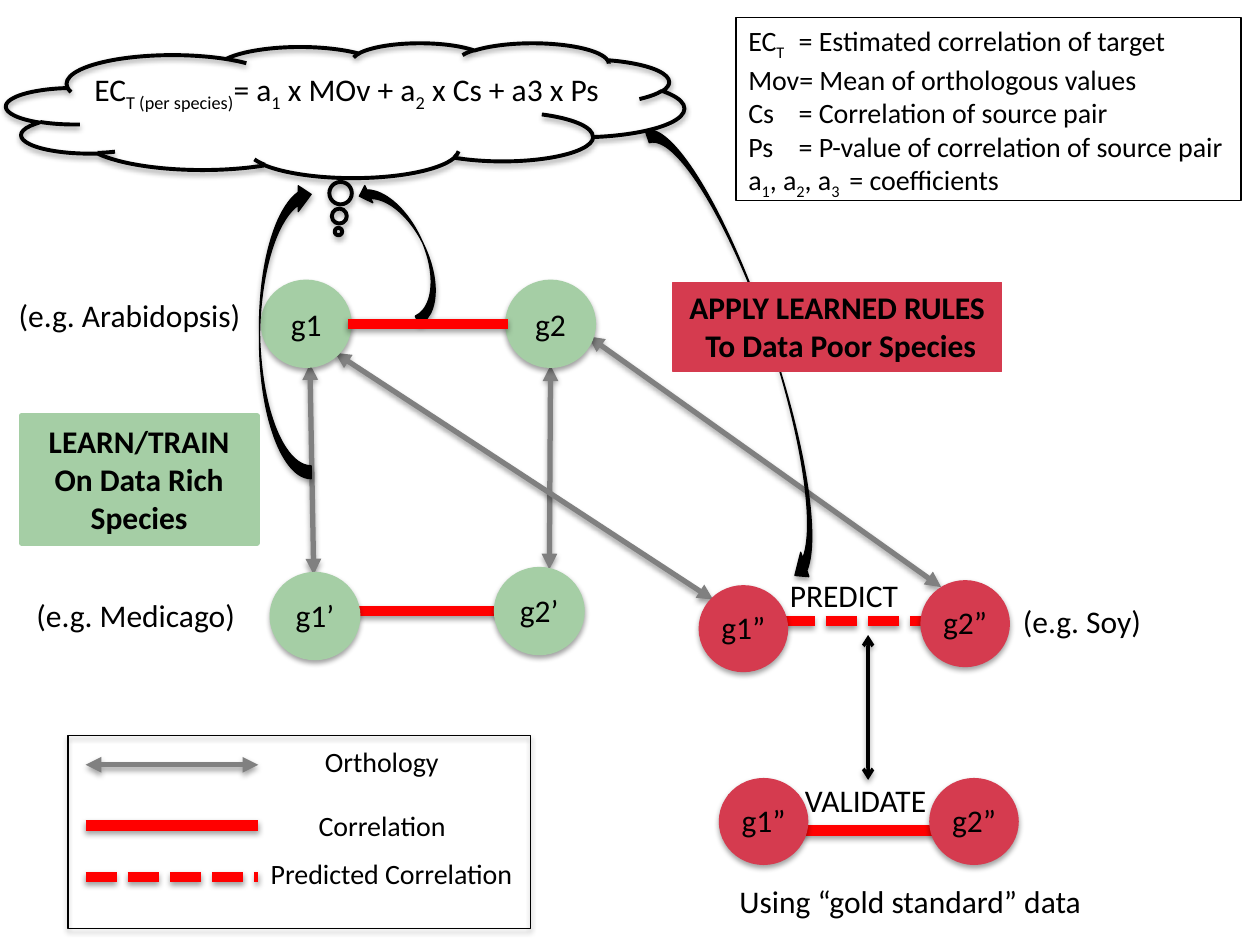
"""Build the slide on learning gene correlations across plant species."""
from lxml.etree import SubElement
from pptx import Presentation
from pptx.dml.color import RGBColor
from pptx.enum.dml import MSO_LINE
from pptx.enum.shapes import MSO_CONNECTOR, MSO_SHAPE
from pptx.enum.text import MSO_ANCHOR, MSO_AUTO_SIZE, PP_ALIGN
from pptx.oxml import parse_xml
from pptx.oxml.ns import qn
from pptx.util import Inches, Pt

BLACK, GREY, RED = "000000", "808080", "FF0000"
GREEN, CRIMSON = "A5CEA5", "D53B4F"
SHADOW = (
    '<a:effectLst xmlns:a="http://schemas.openxmlformats.org/drawingml/2006/main">'
    '<a:outerShdw blurRad="40000" dist="22000" dir="5400000" rotWithShape="0">'
    '<a:srgbClr val="000000"><a:alpha val="36000"/></a:srgbClr>'
    '</a:outerShdw></a:effectLst>'
)

prs = Presentation()
prs.slide_width, prs.slide_height = Inches(10), Inches(7.5)
slide = prs.slides.add_slide(prs.slide_layouts[6])
CELL = prs.slide_width / 100


def add_part(parent, preset, place, text="", fill=None, line=None, width=0.75, shadow=False,
             size=18, bold=False, align=PP_ALIGN.CENTER, wrap=False, anchor=MSO_ANCHOR.TOP):
    """Add a shape or text box on the cell grid; text between bars is subscript."""
    box = [round(cells * CELL) for cells in place]
    if preset is None:
        part = parent.add_textbox(*box)
    else:
        part = parent.add_shape(preset, *box)
        if fill:
            part.fill.solid()
            part.fill.fore_color.rgb = RGBColor.from_string(fill)
        else:
            part.fill.background()
        if line:
            part.line.color.rgb = RGBColor.from_string(line)
            part.line.width = Pt(width)
        else:
            part.line.fill.background()
        if shadow:
            part._element.spPr.append(parse_xml(SHADOW))
        else:
            part.shadow.inherit = False
    if text:
        frame = part.text_frame
        frame.word_wrap = wrap
        frame.vertical_anchor = anchor
        if anchor == MSO_ANCHOR.TOP:
            frame.auto_size = MSO_AUTO_SIZE.SHAPE_TO_FIT_TEXT
        for row, words in enumerate(text.split("\n")):
            paragraph = frame.add_paragraph() if row else frame.paragraphs[0]
            paragraph.alignment = align
            if "\t" in words:
                tabs = SubElement(paragraph._p.get_or_add_pPr(), qn("a:tabLst"))
                SubElement(tabs, qn("a:tab"), pos=str(Inches(0.4)), algn="l")
            for index, piece in enumerate(words.split("|")):
                run = paragraph.add_run()
                run.text = piece
                run.font.name, run.font.size, run.font.bold = "Calibri", Pt(size), bold
                run.font.color.rgb = RGBColor.from_string(BLACK)
                if index % 2:
                    run.font._element.set("baseline", "-25000")
    return part


def add_link(ends, color, width, arrow=None, dashed=False):
    """Draw a shadowed straight line between two grid points."""
    link = slide.shapes.add_connector(MSO_CONNECTOR.STRAIGHT, *[round(cells * CELL) for cells in ends])
    link.line.color.rgb = RGBColor.from_string(color)
    link.line.width = Pt(width)
    if dashed:
        link.line.dash_style = MSO_LINE.SQUARE_DOT
    if arrow:
        for end in ("a:headEnd", "a:tailEnd"):
            SubElement(link._element.spPr.find(qn("a:ln")), qn(end), type=arrow)
    link._element.spPr.append(parse_xml(SHADOW))


orthology = [(24.6, 28.9, 24.9, 45.6), (43.7, 29, 43.6, 45.2), (46.7, 26.7, 74.7, 46.6),
             (26.6, 28, 56.6, 47.6), (20.5, 60.7, 6.8, 60.7)]
for ends in orthology:
    add_link(ends, GREY, 3, "triangle")
add_link((68.9, 50.4, 68.9, 61.9), BLACK, 2, "arrow")

upper_genes = [(20.9, "g1"), (40.3, "g2")]
for left, gene in upper_genes:
    add_part(slide.shapes, MSO_SHAPE.OVAL, (left, 22.4, 6.8, 6.6), gene, GREEN, GREEN, 3,
             shadow=True, anchor=MSO_ANCHOR.MIDDLE)

add_part(slide.shapes, None, (2.8, 5.1, 50, 4),
         "EC|T (per species)|= a|1| x MOv + a|2| x Cs + a3 x Ps ", wrap=True)
cloud = add_part(slide.shapes, MSO_SHAPE.CLOUD_CALLOUT, (0.5, 3.4, 53.8, 10.7),
                 line=BLACK, width=2.25, shadow=True)
cloud.adjustments[0], cloud.adjustments[1] = -0.01, 0.9

swoops = [((57.2, 8.7, 4.1, 38.3), 341.4, ()),
          ((20.6, 14.4, 4.1, 23.6), 0, ("flipH", "flipV")),
          ((30.6, 13.7, 3, 12), 335, ("flipV",))]
for place, angle, flips in swoops:
    swoop = add_part(slide.shapes, MSO_SHAPE.CURVED_LEFT_ARROW, place, fill=BLACK, line=BLACK, shadow=True)
    swoop.rotation = angle
    for flip in flips:
        swoop._element.spPr.xfrm.set(flip, "1")

correlations = [(27.6, 25.7, 40.3, False), (27.2, 48.5, 40, False), (62.8, 65.9, 75.9, False),
                (6.8, 65.5, 20.5, False), (62.2, 49.3, 75.3, True), (6.8, 69.6, 20.5, True)]
for left, row, right, predicted in correlations:
    add_link((left, row, right, row), RED, 6, dashed=predicted)

labels = [((62.9, 61.5, 12.1, 4), "VALIDATE", 18), ((61.7, 45.2, 10.7, 4), "PREDICT", 18),
          ((1.9, 46.8, 17.9, 4), "(e.g. Medicago)", 18), ((0.5, 23, 19.8, 4), "(e.g. Arabidopsis)", 18),
          ((80.2, 47.3, 11.5, 4), "(e.g. Soy)", 18),
          ((57.7, 69.5, 29.4, 4), "Using “gold standard” data", 18),
          ((24.8, 58.6, 11.2, 3.7), "Orthology", 16), ((24.3, 63.7, 12.3, 3.7), "Correlation", 16),
          ((20.5, 67.5, 21.5, 3.7), "Predicted Correlation", 16)]
for place, words, size in labels:
    add_part(slide.shapes, None, place, words, size=size, align=PP_ALIGN.LEFT)

add_part(slide.shapes, MSO_SHAPE.RECTANGLE, (5.4, 58.4, 36.7, 15.3), line=BLACK, shadow=True)
add_part(slide.shapes, MSO_SHAPE.RECTANGLE, (58.4, 1.4, 40.1, 14.5),
         "EC|T|\t= Estimated correlation of target\nMov= Mean of orthologous values\n"
         "Cs\t= Correlation of source pair\nPs\t= P-value of correlation of source pair\n"
         "a|1|, a|2|, a|3 | = coefficients", line=BLACK, size=16, align=PP_ALIGN.LEFT)
add_part(slide.shapes, MSO_SHAPE.RECTANGLE, (53.4, 22.4, 26.1, 7.1),
         "APPLY LEARNED RULES\n To Data Poor Species", CRIMSON, CRIMSON, bold=True)
add_part(slide.shapes, MSO_SHAPE.RECTANGLE, (1.7, 33, 18.7, 10.1),
         "LEARN/TRAIN\nOn Data Rich\nSpecies", GREEN, GREEN, 3, bold=True, wrap=True)

lower_genes = [(57.2, 61.9, "g1”", CRIMSON, 2.25, 5.5), (21.6, 45.6, "g1’", GREEN, 3, 5.1),
               (39.4, 45.2, "g2’", GREEN, 3, 5.1), (73.9, 61.9, "g2”", CRIMSON, 2.25, 5.5),
               (55.6, 46.6, "g1”", CRIMSON, 2.25, 5.5), (73.2, 46.2, "g2”", CRIMSON, 2.25, 5.5)]
for left, top, gene, color, width, span in lower_genes:
    node = slide.shapes.add_group_shape().shapes
    add_part(node, MSO_SHAPE.OVAL, (left, top, 6.8, 6.6), fill=color, line=color, width=width, shadow=True)
    add_part(node, MSO_SHAPE.RECTANGLE, (left + (6.8 - span) / 2, top + 1.2, span, 4), gene, color, color)

prs.save("out.pptx")
